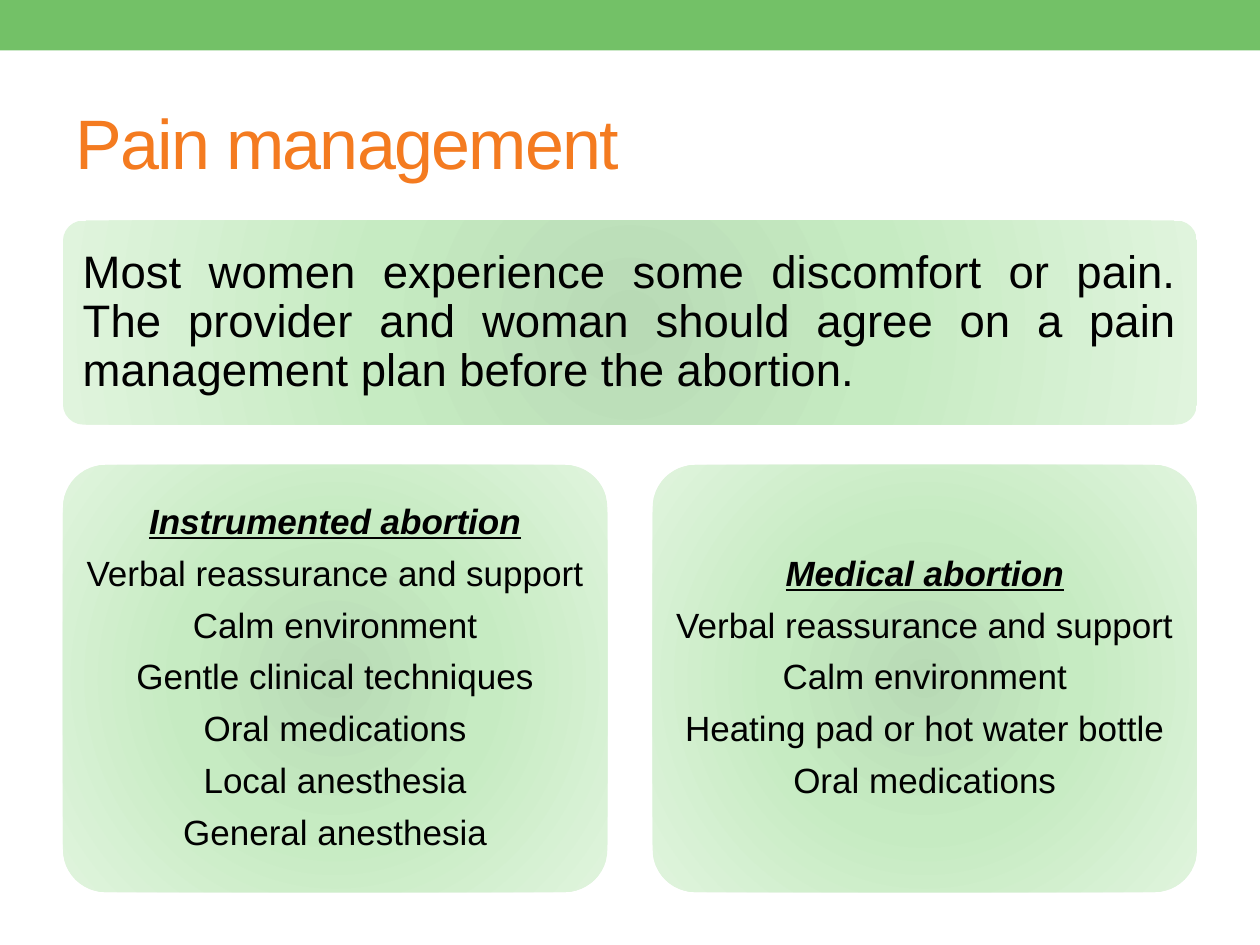
from pptx import Presentation
from pptx.dml.color import RGBColor
from pptx.enum import shapes, text
from pptx.oxml import parse_xml
from pptx.oxml.ns import nsdecls
from pptx.util import Inches, Pt

# Content
TITLE = "Pain management"
INTRO = ("Most women experience some discomfort or pain. The provider and woman "
         "should agree on a pain management plan before the abortion.")
CARDS = [
    ["Instrumented abortion", "Verbal reassurance and support", "Calm environment",
     "Gentle clinical techniques", "Oral medications", "Local anesthesia",
     "General anesthesia"],
    ["Medical abortion", "Verbal reassurance and support", "Calm environment",
     "Heating pad or hot water bottle", "Oral medications"],
]

THEME = {
    "font": "Arial", "bar": "73C167", "title": "F47B20", "text": "000000",
    "gradient": [(0, "B8DAB5"), (45, "C6EBC2"), (100, "E0F4DD")],
    "title_size": 40, "intro_size": 26, "card_size": 20,
}

# Layout in inches
SLIDE_W, SLIDE_H, MARGIN = 10, 7.5, 0.5
CONTENT_W = SLIDE_W - 2 * MARGIN
INTRO_TOP, INTRO_H = 1.75, 1.62
CARD_TOP, CARD_W, CARD_H = 3.69, 4.32, 3.39
CARD_GAP = (CONTENT_W - len(CARDS) * CARD_W) / (len(CARDS) - 1)


def add_box(slide, kind, left, top, width, height):
    sp = slide.shapes.add_shape(kind, Inches(left), Inches(top),
                                Inches(width), Inches(height))
    sp.shadow.inherit = False
    sp.line.fill.background()
    return sp


def style_run(r, size, color):
    r.font.name = THEME["font"]
    r.font.size = Pt(size)
    r.font.color.rgb = RGBColor.from_string(color)


def fill_radial(sp):
    stops = "".join(f'<a:gs pos="{pos * 1000}"><a:srgbClr val="{color}"/></a:gs>'
                    for pos, color in THEME["gradient"])
    grad = parse_xml(
        f'<a:gradFill {nsdecls("a")} rotWithShape="1"><a:gsLst>{stops}</a:gsLst>'
        '<a:path path="circle"><a:fillToRect l="100000" t="100000" r="100000" '
        'b="100000"/></a:path></a:gradFill>')
    sp.fill.background()
    props = sp.element.spPr
    props.replace(props.find("a:noFill", {"a": grad.nsmap["a"]}), grad)


def add_panel(slide, place, lines, size, align, inset):
    sp = add_box(slide, shapes.MSO_SHAPE.ROUNDED_RECTANGLE, *place)
    sp.adjustments[0] = 0.1
    fill_radial(sp)
    tf = sp.text_frame
    tf.word_wrap = True
    tf.vertical_anchor = text.MSO_ANCHOR.MIDDLE
    tf.margin_left = tf.margin_right = Inches(inset)
    tf.margin_top = tf.margin_bottom = Inches(inset)
    tf.text = "\n".join(lines)
    for p in tf.paragraphs:
        p.alignment = align
        p.line_spacing = 0.9
        p.space_after = Pt(round(size * 0.4))
        style_run(p.runs[0], size, THEME["text"])
    return sp


prs = Presentation()
prs.slide_width, prs.slide_height = Inches(SLIDE_W), Inches(SLIDE_H)
slide = prs.slides.add_slide(prs.slide_layouts[5])

# Top bar
bar = add_box(slide, shapes.MSO_SHAPE.RECTANGLE, 0, 0, SLIDE_W, 0.4)
bar.fill.solid()
bar.fill.fore_color.rgb = RGBColor.from_string(THEME["bar"])

# Title
title = slide.shapes.title
title.left, title.top = Inches(MARGIN), Inches(0.58)
title.width, title.height = Inches(CONTENT_W), Inches(1.08)
title.text_frame.text = TITLE
title.text_frame.vertical_anchor = text.MSO_ANCHOR.MIDDLE
p = title.text_frame.paragraphs[0]
p.alignment = text.PP_ALIGN.LEFT
style_run(p.runs[0], THEME["title_size"], THEME["title"])
p.runs[0].font._element.set("spc", "-100")

# Introduction panel
add_panel(slide, (MARGIN, INTRO_TOP, CONTENT_W, INTRO_H), [INTRO],
          THEME["intro_size"], text.PP_ALIGN.JUSTIFY, 0.11)

# Method cards
for i, lines in enumerate(CARDS):
    left = MARGIN + i * (CARD_W + CARD_GAP)
    card = add_panel(slide, (left, CARD_TOP, CARD_W, CARD_H), lines,
                     THEME["card_size"], text.PP_ALIGN.CENTER, 0.08)
    heading = card.text_frame.paragraphs[0].runs[0].font
    heading.bold = heading.italic = heading.underline = True

prs.save("out.pptx")
